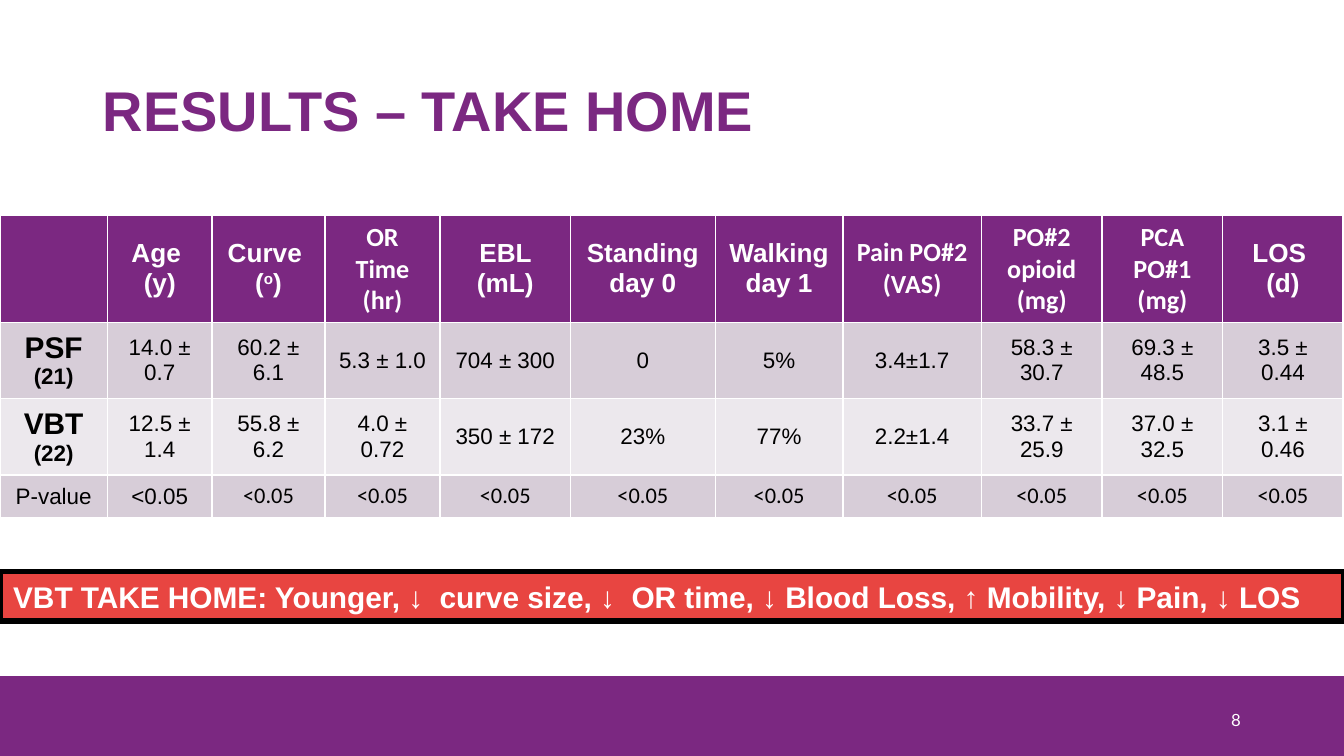
from lxml.etree import SubElement
from pptx import Presentation
from pptx.dml.color import RGBColor
from pptx.enum.shapes import MSO_SHAPE as Shape
from pptx.enum.text import MSO_ANCHOR as Anchor, PP_ALIGN as Align
from pptx.oxml.ns import qn
from pptx.util import Cm, Pt

PURPLE = RGBColor(0x7B, 0x28, 0x81)
RED = RGBColor(0xE8, 0x45, 0x41)
MAUVE = RGBColor(0xD7, 0xCD, 0xD8)
PALE = RGBColor(0xEC, 0xE8, 0xED)
WHITE = RGBColor(0xFF, 0xFF, 0xFF)
BLACK = RGBColor(0x00, 0x00, 0x00)

HEADER = dict(size=Pt(14), bold=True, color=WHITE)
CALIBRI_HEADER = dict(HEADER, name="Calibri")
GROUP = dict(size=Pt(16), bold=True)
COUNT = dict(size=Pt(12), bold=True)
BODY = dict(size=Pt(12))
CALIBRI_BODY = dict(BODY, name="Calibri")

COLUMN_WIDTHS = [2.03, 1.98, 2.13, 2.18, 2.46, 2.74, 2.41, 2.62, 2.28, 2.28, 2.28]
ROW_HEIGHTS = [1.63, 1.42, 1.44, 0.81]
ROW_FILLS = [PURPLE, MAUVE, PALE, MAUVE]

HEADINGS = [
    (["Age ", "(y)"], HEADER),
    (["OR Time (hr)"], CALIBRI_HEADER),
    (["EBL (mL)"], HEADER),
    (["Standing day 0"], HEADER),
    (["Walking day 1"], HEADER),
    (["Pain PO#2", "(VAS)"], CALIBRI_HEADER),
    (["PO#2 opioid (mg)"], CALIBRI_HEADER),
    (["PCA PO#1 (mg)"], CALIBRI_HEADER),
    (["LOS ", "(d)"], HEADER),
]
CURVE = [
    [("Curve ", HEADER)],
    [("(", HEADER), ("o", dict(HEADER, baseline=30000)), (")", HEADER)],
]
PSF = ["14.0 ± 0.7", "60.2 ± 6.1", "5.3 ± 1.0", "704 ± 300", "0", "5%",
       "3.4±1.7", "58.3 ± 30.7", "69.3 ± 48.5", "3.5 ± 0.44"]
VBT = ["12.5 ± 1.4", "55.8 ± 6.2", "4.0 ± 0.72", "350 ± 172", "23%", "77%",
       "2.2±1.4", "33.7 ± 25.9", "37.0 ± 32.5", "3.1 ± 0.46"]
TAKE_HOME = ("VBT TAKE HOME: Younger, ↓  curve size, ↓  OR time, ↓ Blood Loss, "
             "↑ Mobility, ↓ Pain, ↓ LOS")


def group_row(name, count, values):
    """Return the cells of one patient group."""
    label = [[(f"{name} ", GROUP), (count, COUNT)]]
    return [label] + [[[(value, BODY)]] for value in values]


def table_rows():
    """Return every table row as cells of paragraphs of (text, format) runs."""
    headings = [[[(line, style)] for line in lines] for lines, style in HEADINGS]
    header = [[], headings[0], CURVE, *headings[1:]]
    styles = [BODY, BODY] + [CALIBRI_BODY] * 9
    texts = ["P-value"] + ["<0.05"] * 10
    p_values = [[[(text, style)]] for text, style in zip(texts, styles)]
    return [header, group_row("PSF", "(21)", PSF), group_row("VBT", "(22)", VBT), p_values]


class SlideBuilder:
    """Hold the base text style and the slide being built."""

    base = dict(name="Arial", size=Pt(12), bold=False, color=BLACK)

    def __init__(self, slide):
        self.slide = slide

    def fill_text(self, frame, paragraphs, align=Align.LEFT, spacing=None):
        """Fill a text frame with paragraphs of (text, format) runs."""
        for index, runs in enumerate(paragraphs):
            paragraph = frame.add_paragraph() if index else frame.paragraphs[0]
            paragraph.alignment = align
            paragraph.line_spacing = spacing
            for text, style in runs:
                run = paragraph.add_run()
                run.text = text
                values = {**self.base, **style}
                run.font.color.rgb = values.pop("color")
                baseline = values.pop("baseline", None)
                for key, value in values.items():
                    setattr(run.font, key, value)
                if baseline:
                    run._r.get_or_add_rPr().set("baseline", str(baseline))

    def text(self, box, text, style, **layout):
        """Add a text box with its text in the middle."""
        frame = self.slide.shapes.add_textbox(*map(Cm, box)).text_frame
        settings = dict(word_wrap=True, vertical_anchor=Anchor.MIDDLE,
                        margin_left=Cm(0.19), margin_right=Cm(0.19),
                        margin_top=Cm(0.1), margin_bottom=Cm(0.1))
        for key, value in settings.items():
            setattr(frame, key, value)
        self.fill_text(frame, [[(text, style)]], **layout)

    def rectangle(self, box, fill, line=None):
        """Add a filled rectangle, outlined when a line colour is given."""
        shape = self.slide.shapes.add_shape(Shape.RECTANGLE, *map(Cm, box))
        shape.shadow.inherit = False
        shape.fill.solid()
        shape.fill.fore_color.rgb = fill
        if line is None:
            shape.line.fill.background()
        else:
            shape.line.color.rgb = line
            shape.line.width = Pt(3)
        return shape

    def banner(self, box, text, style):
        """Add an outlined rectangle with left-aligned text."""
        frame = self.rectangle(box, RED, BLACK).text_frame
        frame.word_wrap = True
        frame.vertical_anchor = Anchor.MIDDLE
        self.fill_text(frame, [[(text, style)]])

    def border(self, cell):
        """Give a cell thin white borders."""
        properties = cell._tc.get_or_add_tcPr()
        for side in ("a:lnL", "a:lnR", "a:lnT", "a:lnB"):
            line = SubElement(properties, qn(side), w=str(Pt(1)))
            fill = SubElement(line, qn("a:solidFill"))
            SubElement(fill, qn("a:srgbClr"), val=str(WHITE))

    def table(self, left, top, rows):
        """Add the results table."""
        size = Cm(sum(COLUMN_WIDTHS)), Cm(sum(ROW_HEIGHTS))
        table = self.slide.shapes.add_table(
            len(rows), len(COLUMN_WIDTHS), Cm(left), Cm(top), *size).table
        for column, width in zip(table.columns, COLUMN_WIDTHS):
            column.width = Cm(width)
        for row, height, fill, contents in zip(table.rows, ROW_HEIGHTS, ROW_FILLS, rows):
            row.height = Cm(height)
            for cell, paragraphs in zip(row.cells, contents):
                cell.vertical_anchor = Anchor.MIDDLE
                self.border(cell)
                cell.fill.solid()
                cell.fill.fore_color.rgb = fill
                self.fill_text(cell.text_frame, paragraphs, Align.CENTER)


def main():
    """Build and save the slide."""
    presentation = Presentation()
    presentation.slide_width, presentation.slide_height = Cm(25.4), Cm(14.29)
    builder = SlideBuilder(presentation.slides.add_slide(presentation.slide_layouts[6]))
    builder.rectangle((0, 12.78, 25.4, 1.51), PURPLE)
    builder.text((1.75, 0.76, 21.9, 2.77), "RESULTS – TAKE HOME",
                 dict(size=Pt(30), bold=True, color=PURPLE), spacing=0.9)
    builder.text((22.17, 13.23, 1.47, 0.76), "8",
                 dict(name="Lato", size=Pt(9), color=WHITE), align=Align.RIGHT)
    builder.table(0, 4.06, table_rows())
    builder.banner((0, 10.8, 25.4, 0.94), TAKE_HOME,
                   dict(size=Pt(16), bold=True, color=WHITE))
    presentation.save("out.pptx")


if __name__ == "__main__":
    main()
